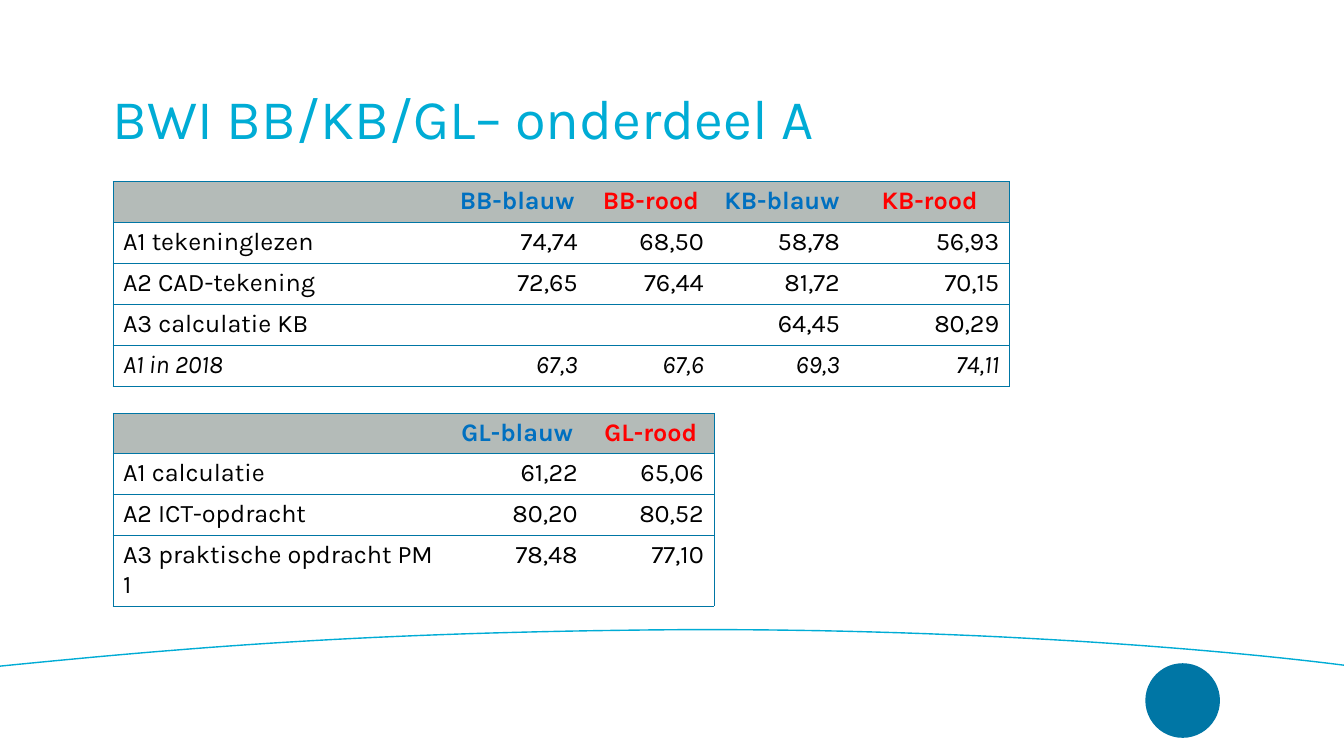
"""Build the slide with exam part A scores in two tables."""
from lxml import etree
from pptx import Presentation, util as u
from pptx.dml.color import RGBColor
from pptx.enum import shapes, text
from pptx.oxml.ns import qn

CYAN = RGBColor(0x00, 0xAC, 0xD5)
EDGE = RGBColor(0x00, 0x76, 0xA5)
GREY = RGBColor(0xB4, 0xBB, 0xB8)
BLUE = RGBColor(0x00, 0x70, 0xC0)
RED = RGBColor(0xFF, 0x00, 0x00)
BLACK = RGBColor(0x00, 0x00, 0x00)
FONT = "Karla"
WIDTHS = [3.31, 1.4, 1.25, 1.35, 1.58]
HIGH = 2.03 / 5
LEFT = 1.12


def style(font, color, **extra):
    font.color.rgb = color
    for key, val in {"name": FONT, "size": u.Pt(18), **extra}.items():
        setattr(font, key, val)


def border(cell, side, shown):
    line = etree.SubElement(cell._tc.get_or_add_tcPr(), qn("a:ln" + side), w="6350")
    if shown:
        fill = etree.SubElement(line, qn("a:solidFill"))
        etree.SubElement(fill, qn("a:srgbClr"), val=str(EDGE))
    else:
        etree.SubElement(line, qn("a:noFill"))


prs = Presentation()
prs.slide_width, prs.slide_height = u.Inches(13.33), u.Inches(7.5)
slide = prs.slides.add_slide(prs.slide_layouts[6])

logo = slide.shapes.add_shape(shapes.MSO_SHAPE.OVAL, u.Inches(11.36), u.Inches(6.58),
                              u.Inches(0.74), u.Inches(0.74))
logo.shadow.inherit = False
logo.fill.solid()
logo.fill.fore_color.rgb = EDGE
logo.line.fill.background()

curves = [[(-0.01, 6.61), (1.9, 6.42), (3.6, 6.28), (6.45, 6.25)],
          [(6.45, 6.25), (9.3, 6.22), (11.92, 6.42), (13.33, 6.6)]]
steps = 30
dots = []
for curve in curves:
    for step in range(1, steps + 1):
        t = step / steps
        parts = [(1 - t) ** 3, 3 * t * (1 - t) ** 2, 3 * t ** 2 * (1 - t), t ** 3]
        dots.append([u.Inches(sum(p * dot[axis] for p, dot in zip(parts, curve)))
                     for axis in (0, 1)])
pen = slide.shapes.build_freeform(*[u.Inches(n) for n in curves[0][0]])
pen.add_line_segments(dots, close=False)
arc = pen.convert_to_shape()
arc.shadow.inherit = False
arc.fill.background()
arc.line.color.rgb = CYAN
arc.line.width = u.Pt(1)

title = slide.shapes.add_textbox(u.Inches(LEFT), u.Inches(0.48), u.Inches(11.1), u.Inches(1.45))
frame = title.text_frame
for key, val in {"word_wrap": True, "vertical_anchor": text.MSO_ANCHOR.MIDDLE,
                 "margin_left": 0, "margin_right": 0,
                 "margin_top": 0, "margin_bottom": 0}.items():
    setattr(frame, key, val)
para = frame.paragraphs[0]
para.line_spacing = 0.9
run = para.add_run()
run.text = "BWI BB/KB/GL– onderdeel A"
style(run.font, CYAN, size=u.Pt(40))

tables = [
    (1.8, [HIGH] * 5, [
        ["", "BB-blauw", "BB-rood", "KB-blauw", "KB-rood"],
        ["A1 tekeninglezen", "74,74", "68,50", "58,78", "56,93"],
        ["A2 CAD-tekening", "72,65", "76,44", "81,72", "70,15"],
        ["A3 calculatie KB", "", "", "64,45", "80,29"],
        ["A1 in 2018", "67,3", "67,6", "69,3", "74,11"]]),
    (4.1, [0.29] + [HIGH] * 3, [
        ["", "GL-blauw", "GL-rood"],
        ["A1 calculatie", "61,22", "65,06"],
        ["A2 ICT-opdracht", "80,20", "80,52"],
        ["A3 praktische opdracht PM 1", "78,48", "77,10"]]),
]
for top, highs, rows in tables:
    count = len(rows[0])
    wides = WIDTHS[:count]
    grid = slide.shapes.add_table(len(rows), count, u.Inches(LEFT), u.Inches(top),
                                  u.Inches(sum(wides)), u.Inches(sum(highs))).table
    grid.first_row = grid.horz_banding = False
    for col, wide in zip(grid.columns, wides):
        col.width = u.Inches(wide)
    for row, high in zip(grid.rows, highs):
        row.height = u.Inches(high)
    for r, row in enumerate(rows):
        for c, word in enumerate(row):
            cell = grid.cell(r, c)
            sides = {"L": c == 0, "R": c == count - 1, "T": True, "B": True}
            for side, shown in sides.items():
                border(cell, side, shown)
            para = cell.text_frame.paragraphs[0]
            if r == 0:
                cell.fill.solid()
                cell.fill.fore_color.rgb = GREY
                para.alignment = text.PP_ALIGN.CENTER
                color = BLUE if c % 2 else RED
            else:
                cell.fill.background()
                para.alignment = text.PP_ALIGN.RIGHT if c else text.PP_ALIGN.LEFT
                color = BLACK
            if word:
                run = para.add_run()
                run.text = word
                style(run.font, color, bold=r == 0, italic=row[0] == "A1 in 2018")

prs.save("out.pptx")
